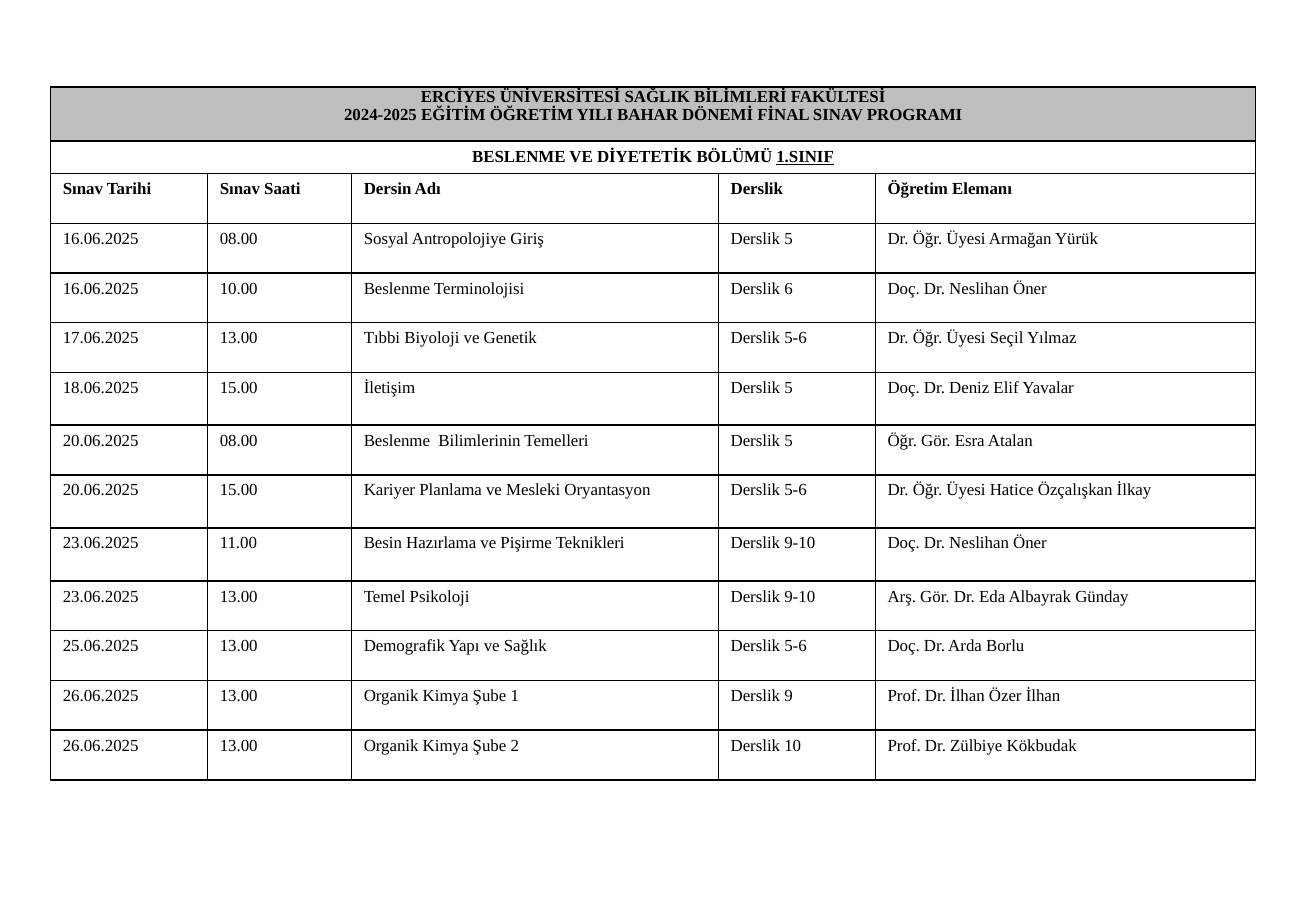
import lxml.etree
import pptx
import pptx.dml.color
import pptx.enum.text
import pptx.oxml.ns
import pptx.util

Cm = pptx.util.Cm
Pt = pptx.util.Pt
BLACK = pptx.dml.color.RGBColor(0x00, 0x00, 0x00)
WHITE = pptx.dml.color.RGBColor(0xFF, 0xFF, 0xFF)
GREY = pptx.dml.color.RGBColor(0xBF, 0xBF, 0xBF)
FONT = "Times New Roman"

TITLE = (
    "ERCİYES ÜNİVERSİTESİ SAĞLIK BİLİMLERİ FAKÜLTESİ",
    "2024-2025 EĞİTİM ÖĞRETİM YILI BAHAR DÖNEMİ FİNAL SINAV PROGRAMI",
)
DEPARTMENT = "BESLENME VE DİYETETİK BÖLÜMÜ "
CLASS_YEAR = "1.SINIF"
HEADINGS = ("Sınav Tarihi", "Sınav Saati", "Dersin Adı", "Derslik", "Öğretim Elemanı")
EXAMS = [
    ("16.06.2025", "08.00", "Sosyal Antropolojiye Giriş", "Derslik 5", "Dr. Öğr. Üyesi Armağan Yürük"),
    ("16.06.2025", "10.00", "Beslenme Terminolojisi", "Derslik 6", "Doç. Dr. Neslihan Öner"),
    ("17.06.2025", "13.00", "Tıbbi Biyoloji ve Genetik", "Derslik 5-6", "Dr. Öğr. Üyesi Seçil Yılmaz"),
    ("18.06.2025", "15.00", "İletişim", "Derslik 5", "Doç. Dr. Deniz Elif Yavalar"),
    ("20.06.2025", "08.00", "Beslenme  Bilimlerinin Temelleri", "Derslik 5", "Öğr. Gör. Esra Atalan"),
    ("20.06.2025", "15.00", "Kariyer Planlama ve Mesleki Oryantasyon", "Derslik 5-6",
     "Dr. Öğr. Üyesi Hatice Özçalışkan İlkay"),
    ("23.06.2025", "11.00", "Besin Hazırlama ve Pişirme Teknikleri", "Derslik 9-10", "Doç. Dr. Neslihan Öner"),
    ("23.06.2025", "13.00", "Temel Psikoloji", "Derslik 9-10", "Arş. Gör. Dr. Eda Albayrak Günday"),
    ("25.06.2025", "13.00", "Demografik Yapı ve Sağlık", "Derslik 5-6", "Doç. Dr. Arda Borlu"),
    ("26.06.2025", "13.00", "Organik Kimya Şube 1", "Derslik 9", "Prof. Dr. İlhan Özer İlhan"),
    ("26.06.2025", "13.00", "Organik Kimya Şube 2", "Derslik 10", "Prof. Dr. Zülbiye Kökbudak"),
]
COLUMN_WIDTHS = (3.28, 3.01, 7.67, 3.28, 7.94)
ROW_HEIGHT = 1.04
SPECIAL_HEIGHTS = {0: 1.13, 1: 0.68, 6: 1.1, 8: 1.11, 9: 1.11}


def add_span(para, text, bold=False, underline=False):
    span = para.add_run()
    span.text = text
    span.font.name = FONT
    span.font.size = Pt(10)
    span.font.bold = bold
    span.font.underline = underline
    span.font.color.rgb = BLACK


def style_cell(cell, color):
    properties = cell._tc.get_or_add_tcPr()
    for side in ("a:lnL", "a:lnR", "a:lnT", "a:lnB"):
        line = lxml.etree.SubElement(properties, pptx.oxml.ns.qn(side), w=str(Pt(1)))
        fill = lxml.etree.SubElement(line, pptx.oxml.ns.qn("a:solidFill"))
        lxml.etree.SubElement(fill, pptx.oxml.ns.qn("a:srgbClr"), val=str(BLACK))
    cell.fill.solid()
    cell.fill.fore_color.rgb = color


def main():
    deck = pptx.Presentation()
    deck.slide_width = Cm(27.51)
    deck.slide_height = Cm(19.05)
    page = deck.slides.add_slide(deck.slide_layouts[6])

    lines = [HEADINGS] + EXAMS
    row_count = len(lines) + 2
    heights = [SPECIAL_HEIGHTS.get(index, ROW_HEIGHT) for index in range(row_count)]
    table = page.shapes.add_table(
        row_count, len(COLUMN_WIDTHS), Cm(1.06), Cm(1.82),
        Cm(sum(COLUMN_WIDTHS)), Cm(sum(heights)),
    ).table
    table.first_row = False
    table.horz_banding = False
    for column, width in zip(table.columns, COLUMN_WIDTHS):
        column.width = Cm(width)
    for index, height in enumerate(heights):
        table.rows[index].height = Cm(height)
        for cell in table.rows[index].cells:
            style_cell(cell, GREY if index == 0 else WHITE)

    for index in (0, 1):
        table.cell(index, 0).merge(table.cell(index, len(COLUMN_WIDTHS) - 1))

    title_cell = table.cell(0, 0)
    title_cell.margin_top = title_cell.margin_bottom = Cm(0)
    title_frame = title_cell.text_frame
    title_frame.paragraphs[0].space_before = Pt(3.2)
    title_frame.add_paragraph()
    for para, text in zip(title_frame.paragraphs, TITLE):
        para.alignment = pptx.enum.text.PP_ALIGN.CENTER
        add_span(para, text, bold=True)

    para = table.cell(1, 0).text_frame.paragraphs[0]
    para.alignment = pptx.enum.text.PP_ALIGN.CENTER
    add_span(para, DEPARTMENT, bold=True)
    add_span(para, CLASS_YEAR, bold=True, underline=True)

    for row, line in enumerate(lines, start=2):
        for column, text in enumerate(line):
            add_span(table.cell(row, column).text_frame.paragraphs[0], text, bold=row == 2)

    deck.save("out.pptx")


if __name__ == "__main__":
    main()
